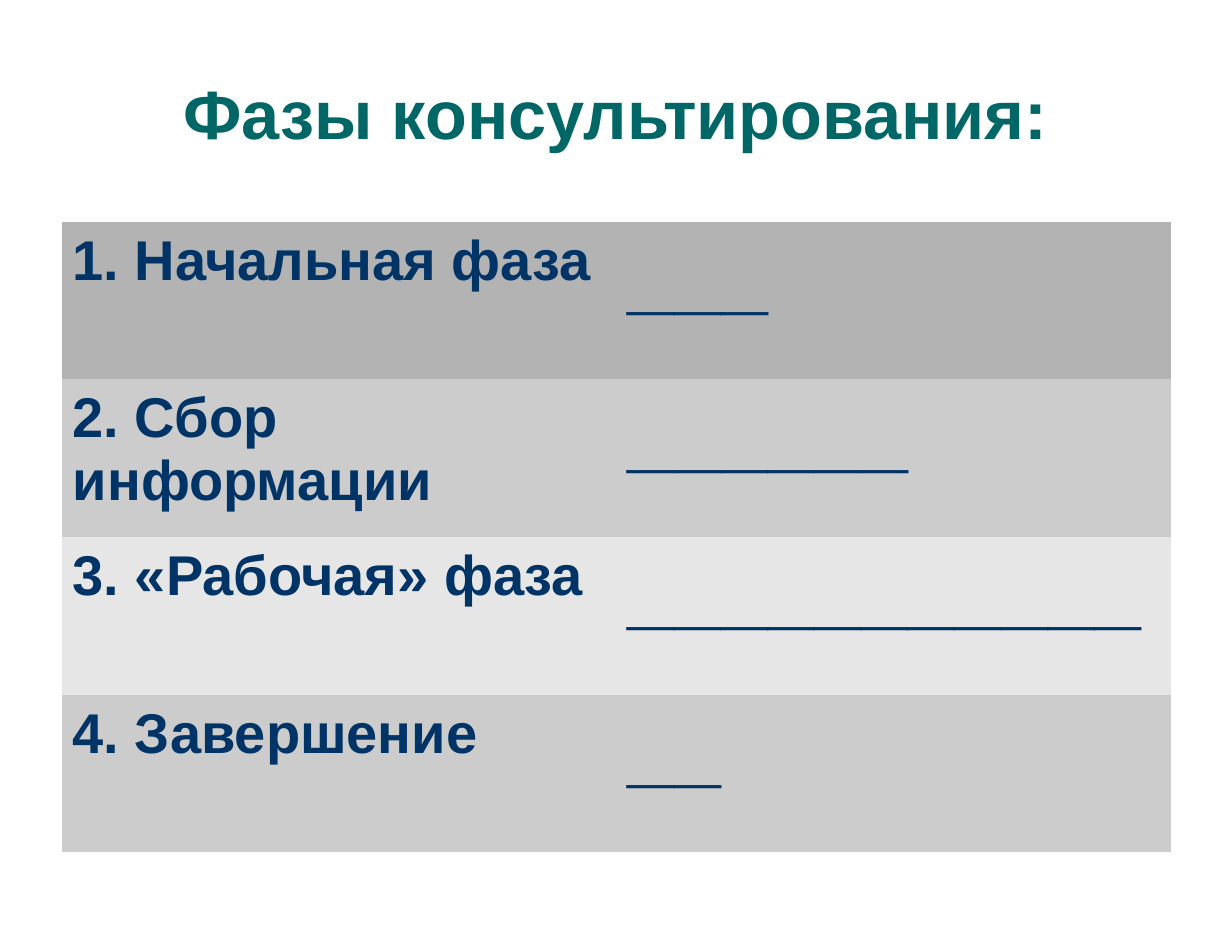
from lxml import etree
from pptx import Presentation
from pptx.dml.color import RGBColor
from pptx.enum.text import MSO_ANCHOR, PP_ALIGN
from pptx.oxml.ns import qn
from pptx.util import Inches, Pt

FONT = "Arial"
TEAL = RGBColor(0x00, 0x66, 0x66)
NAVY = RGBColor(0x00, 0x33, 0x66)
DARK_GRAY = RGBColor(0xB3, 0xB3, 0xB3)
MID_GRAY = RGBColor(0xCC, 0xCC, 0xCC)
LIGHT_GRAY = RGBColor(0xE6, 0xE6, 0xE6)
WHITE = RGBColor(0xFF, 0xFF, 0xFF)

# Phase, length of its answer line in underscores, row fill
PHASES = [
    ("1. Начальная фаза", 3, DARK_GRAY),
    ("2. Сбор информации", 6, MID_GRAY),
    ("3. «Рабочая» фаза", 11, LIGHT_GRAY),
    ("4. Завершение", 2, MID_GRAY),
]


def add_run(p, text, size, color):
    r = p.add_run()
    r.text = text
    r.font.name = FONT
    r.font.size = Pt(size)
    r.font.bold = True
    r.font.color.rgb = color


def set_borders(cell, color, width):
    tcPr = cell._tc.get_or_add_tcPr()
    for i, side in enumerate(("a:lnL", "a:lnR", "a:lnT", "a:lnB")):
        ln = etree.Element(qn(side), w=str(width))
        fill = etree.SubElement(ln, qn("a:solidFill"))
        etree.SubElement(fill, qn("a:srgbClr"), val=str(color))
        tcPr.insert(i, ln)


def fill_cell(cell, text, size, fill):
    cell.fill.solid()
    cell.fill.fore_color.rgb = fill
    set_borders(cell, WHITE, Pt(0.03))
    cell.margin_left = cell.margin_right = Inches(0.1)
    cell.margin_top, cell.margin_bottom = Inches(0.07), Inches(0.05)
    cell.vertical_anchor = MSO_ANCHOR.TOP
    add_run(cell.text_frame.paragraphs[0], text, size, NAVY)


def place_title(s, left, top, width, height):
    title = s.shapes.title
    title.left, title.top, title.width, title.height = left, top, width, height
    tf = title.text_frame
    tf.word_wrap = True
    tf.vertical_anchor = MSO_ANCHOR.MIDDLE
    p = tf.paragraphs[0]
    p.alignment = PP_ALIGN.CENTER
    p.line_spacing = 0.9
    add_run(p, "Фазы консультирования:", 44, TEAL)


def add_phase_table(s, left, top, width, height):
    table = s.shapes.add_table(len(PHASES), 2, left, top, width, height).table
    table.first_row = table.horz_banding = False
    for row, (phase, blanks, fill) in zip(table.rows, PHASES):
        fill_cell(row.cells[0], phase, 36, fill)
        fill_cell(row.cells[1], "_" * blanks, 54, fill)


def main():
    prs = Presentation()
    prs.slide_width, prs.slide_height = Inches(11), Inches(8.5)
    s = prs.slides.add_slide(prs.slide_layouts.get_by_name("Title Only"))
    place_title(s, Inches(0.55), Inches(0.34), Inches(9.9), Inches(1.42))
    add_phase_table(s, Inches(0.55), Inches(1.98), Inches(9.91), Inches(5.63))
    prs.save("out.pptx")


if __name__ == "__main__":
    main()
